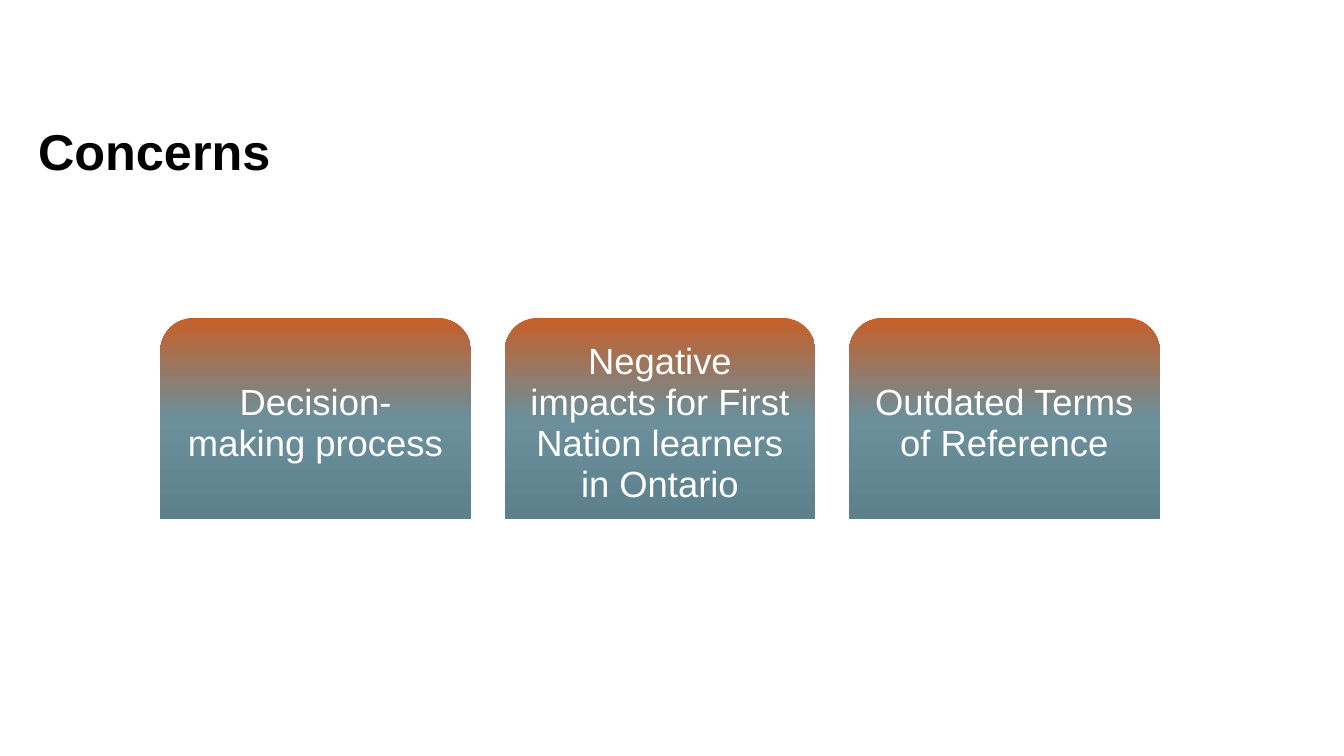
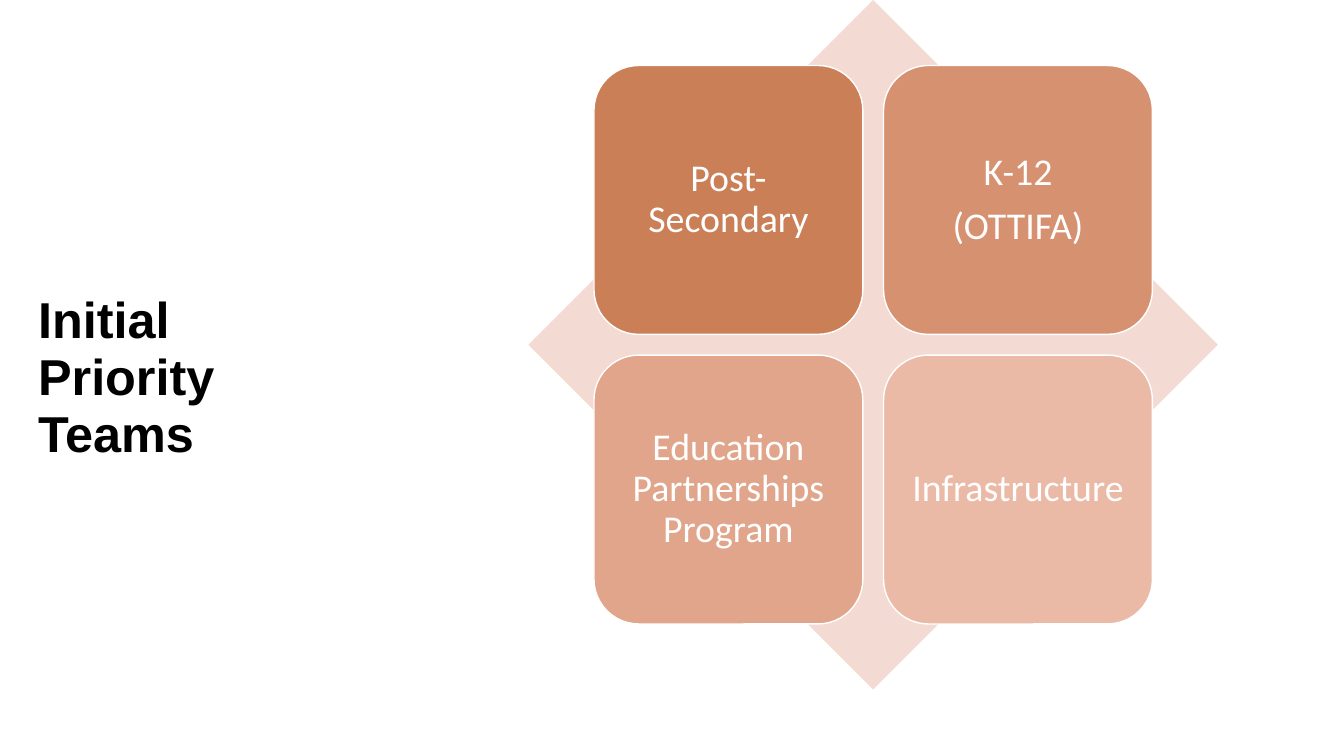
from copy import deepcopy

from pptx import Presentation
from pptx.dml.color import RGBColor
from pptx.enum.shapes import MSO_SHAPE
from pptx.enum.text import MSO_ANCHOR, MSO_AUTO_SIZE, PP_ALIGN
from pptx.oxml.ns import qn
from pptx.util import Pt

ROUND_TOP = MSO_SHAPE.ROUND_2_SAME_RECTANGLE
ROUNDED = MSO_SHAPE.ROUNDED_RECTANGLE
DIAMOND = MSO_SHAPE.DIAMOND
TOP, MIDDLE = MSO_ANCHOR.TOP, MSO_ANCHOR.MIDDLE
LEFT, CENTER = PP_ALIGN.LEFT, PP_ALIGN.CENTER
NO_FIT = MSO_AUTO_SIZE.NONE

BLACK = RGBColor(0x00, 0x00, 0x00)
WHITE = RGBColor(0xFF, 0xFF, 0xFF)
RUST = RGBColor(0xC7, 0x5F, 0x28)
TEAL = RGBColor(0x6B, 0x8F, 0x9B)
DEEP_TEAL = RGBColor(0x5C, 0x80, 0x8C)
BLUSH = RGBColor(0xF3, 0xDA, 0xD2)
COPPER = RGBColor(0xCA, 0x7F, 0x57)
CLAY = RGBColor(0xD6, 0x91, 0x71)
SALMON = RGBColor(0xE0, 0xA5, 0x8B)
PEACH = RGBColor(0xEA, 0xBA, 0xA7)

CONCERNS = [
    "Decision-making process",
    "Negative impacts for First Nation learners in Ontario",
    "Outdated Terms of Reference",
]
TEAMS = [
    ("Post-Secondary", COPPER),
    ("K-12\n(OTTIFA)", CLAY),
    ("Education Partnerships Program", SALMON),
    ("Infrastructure", PEACH),
]


class Deck:
    """Holds the presentation, its shared style and the current slide."""

    def __init__(self):
        self.presentation = Presentation()
        self.presentation.slide_width = Pt(960)
        self.presentation.slide_height = Pt(540)
        self.slide = None

    def new_slide(self, heading, top, width, height):
        layout = self.presentation.slide_layouts[5]
        self.slide = self.presentation.slides.add_slide(layout)
        title = self.slide.shapes.title
        title.left, title.top = Pt(20), Pt(top)
        title.width, title.height = Pt(width), Pt(height)
        self.set_text(title.text_frame, heading, "Arial", 36, BLACK,
                      LEFT, TOP, 0.94, bold=True)

    def set_text(self, frame, text, font, size, color, align, anchor, spacing,
                 bold=False):
        frame.text = text
        frame.word_wrap = True
        frame.auto_size = NO_FIT
        frame.vertical_anchor = anchor
        for paragraph in frame.paragraphs:
            paragraph.alignment = align
            paragraph.line_spacing = spacing
            paragraph.space_before = Pt(0)
            paragraph.space_after = Pt(round(0.35 * size, 2))
            for run in paragraph.runs:
                run.font.name = font
                run.font.size = Pt(size)
                run.font.bold = bold
                run.font.color.rgb = color

    def shape(self, preset, left, top, width, height, color=None):
        shape = self.slide.shapes.add_shape(
            preset, Pt(left), Pt(top), Pt(width), Pt(height))
        shape.shadow.inherit = False
        shape.line.fill.background()
        if color is not None:
            shape.fill.solid()
            shape.fill.fore_color.rgb = color
        return shape

    def fade(self, shape, colors):
        shape.fill.gradient()
        shape.fill.gradient_angle = 270
        stop_list = shape._element.spPr.find(".//" + qn("a:gsLst"))
        stop_list.append(deepcopy(stop_list[0]))
        for index, color in enumerate(colors):
            stop = shape.fill.gradient_stops[index]
            stop.position = index / (len(colors) - 1)
            stop.color.rgb = color

    def label(self, shape, text, font, size, spacing, inset_x, inset_y):
        frame = shape.text_frame
        frame.margin_left = frame.margin_right = Pt(inset_x)
        frame.margin_top = frame.margin_bottom = Pt(inset_y)
        self.set_text(frame, text, font, size, WHITE, CENTER, MIDDLE, spacing)

    def concern_card(self, text, left, top):
        card = self.shape(ROUND_TOP, left, top, 222, 144)
        self.fade(card, [RUST, TEAL, DEEP_TEAL])
        self.label(card, text, "Arial", 26, 0.94, 8, 3)

    def team_card(self, text, color, left, top, side):
        card = self.shape(ROUNDED, left, top, side, side, color)
        card.line.color.rgb = WHITE
        card.line.width = Pt(1)
        self.label(card, text, "Calibri", 27, 0.9, 8, 8)


def main():
    deck = Deck()

    deck.new_slide("Concerns", 86, 624, 62)
    for column, concern in enumerate(CONCERNS):
        deck.concern_card(concern, 114.5 + 246 * column, 227)

    deck.new_slide("Initial Priority Teams", 206, 225, 252)
    left, span = 377.5, 492.5
    deck.shape(DIAMOND, left, 0, span, span, BLUSH)
    side, pitch = 0.39 * span, 0.42 * span
    margin = (span - side - pitch) / 2
    for index, (team, color) in enumerate(TEAMS):
        row, column = divmod(index, 2)
        deck.team_card(team, color, left + margin + pitch * column,
                       margin + pitch * row, side)

    deck.presentation.save("out.pptx")


if __name__ == "__main__":
    main()
